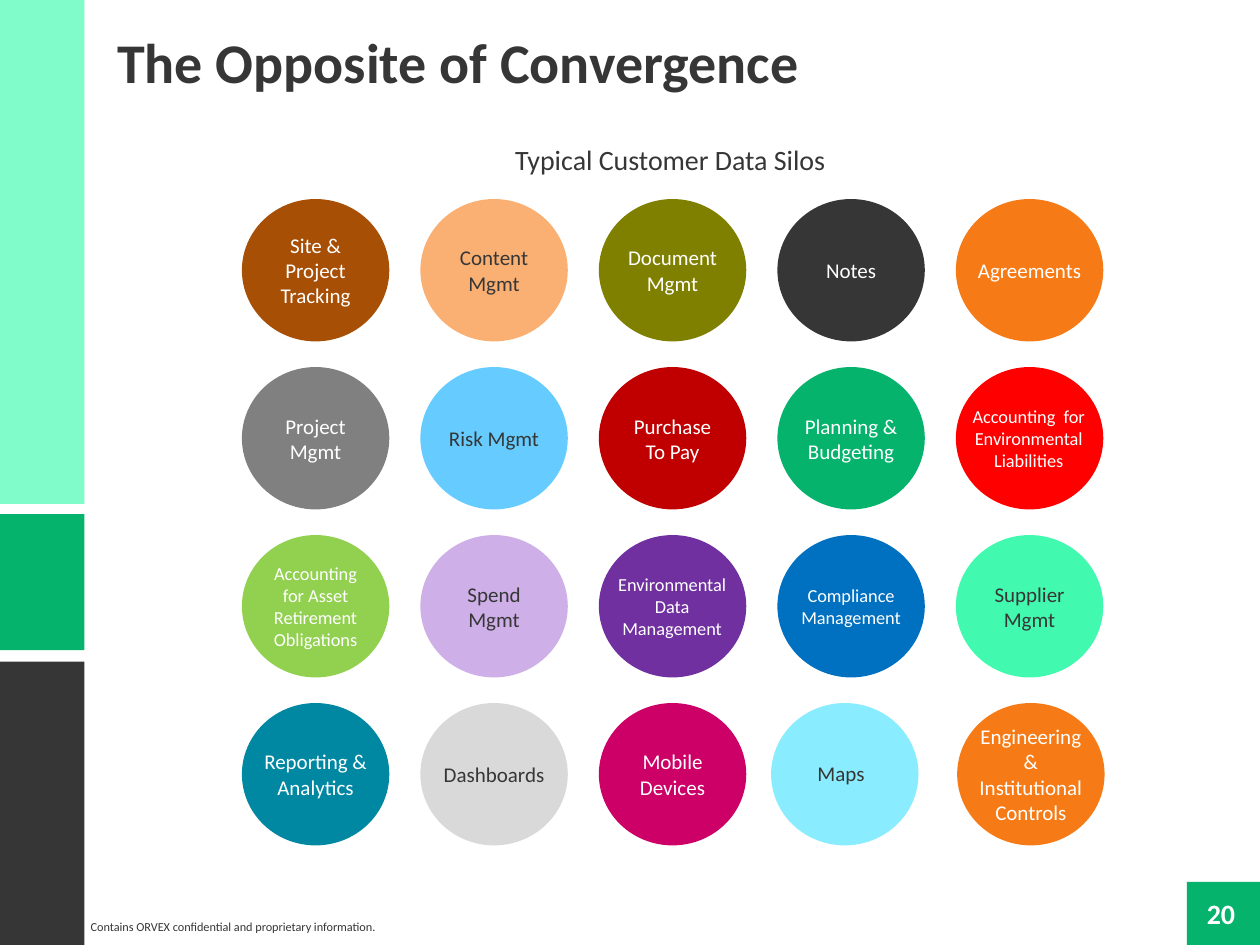
import pptx
import pptx.util
import pptx.dml.color
import pptx.enum.shapes
import pptx.enum.text

Inches = pptx.util.Inches
RGBColor = pptx.dml.color.RGBColor
Align = pptx.enum.text.PP_ALIGN
Anchor = pptx.enum.text.MSO_ANCHOR
AutoSize = pptx.enum.text.MSO_AUTO_SIZE
Shape = pptx.enum.shapes.MSO_SHAPE

FONT = "Calibri"
WHITE = RGBColor(0xFF, 0xFF, 0xFF)
DARK = RGBColor(0x36, 0x36, 0x36)
GREEN = RGBColor(0x05, 0xB3, 0x6D)
MINT = RGBColor(0x80, 0xFB, 0xCA)
BROWN = RGBColor(0xA8, 0x4F, 0x06)
PEACH = RGBColor(0xFA, 0xB0, 0x73)
OLIVE = RGBColor(0x80, 0x80, 0x00)
ORANGE = RGBColor(0xF6, 0x7B, 0x16)
GRAY = RGBColor(0x80, 0x80, 0x80)
SKY = RGBColor(0x66, 0xCC, 0xFF)
CRIMSON = RGBColor(0xC0, 0x00, 0x00)
RED = RGBColor(0xFF, 0x00, 0x00)
LIME = RGBColor(0x92, 0xD0, 0x50)
LILAC = RGBColor(0xCF, 0xAF, 0xE7)
PURPLE = RGBColor(0x70, 0x30, 0xA0)
BLUE = RGBColor(0x00, 0x70, 0xC0)
AQUAMARINE = RGBColor(0x41, 0xFA, 0xAF)
TEAL = RGBColor(0x00, 0x88, 0xA3)
SILVER = RGBColor(0xD9, 0xD9, 0xD9)
MAGENTA = RGBColor(0xCC, 0x00, 0x66)
CYAN = RGBColor(0x8A, 0xEC, 0xFF)

GRID_LEFT, GRID_TOP = 1.92, 1.58
COLUMN_STEP, ROW_STEP = 17 / 12, 4 / 3
SILO_WIDTH, SILO_HEIGHT = 1.17, 1.13

SILO_ROWS = [
    [("Site & Project Tracking", BROWN, WHITE, 12),
     ("Content Mgmt", PEACH, DARK, 12),
     ("Document Mgmt", OLIVE, WHITE, 12),
     ("Notes", DARK, WHITE, 12),
     ("Agreements", ORANGE, WHITE, 12)],
    [("Project Mgmt", GRAY, WHITE, 12),
     ("Risk Mgmt", SKY, DARK, 12),
     ("Purchase\nTo Pay", CRIMSON, WHITE, 12),
     ("Planning & Budgeting", GREEN, WHITE, 12),
     ("Accounting  for Environmental Liabilities", RED, WHITE, 10.5)],
    [("Accounting for Asset Retirement Obligations", LIME, WHITE, 10.5),
     ("Spend Mgmt", LILAC, DARK, 12),
     ("Environmental Data Management", PURPLE, WHITE, 10.5),
     ("Compliance Management", BLUE, WHITE, 10.5),
     ("Supplier Mgmt", AQUAMARINE, DARK, 12)],
    [("Reporting & Analytics", TEAL, WHITE, 12),
     ("Dashboards", SILVER, DARK, 12),
     ("Mobile Devices", MAGENTA, WHITE, 12),
     ("Maps", CYAN, DARK, 12),
     ("Engineering & Institutional\nControls", ORANGE, WHITE, 12)],
]

LABEL_BOXES = {
    "Accounting  for Environmental Liabilities": (7.58, 3.17, 1.17, 0.63),
    "Environmental Data Management": (4.75, 4.5, 1.17, 0.63),
    "Maps": (6.05, 5.99, 1.25, 0.3),
}
SILO_SHIFTS = {"Maps": -0.05, "Engineering & Institutional\nControls": 0.01}


def write_text(frame, text, size, color, align=Align.LEFT, bold=False):
    frame.text = text
    for para in frame.paragraphs:
        para.alignment = align
        for span in para.runs:
            span.font.name = FONT
            span.font.size = pptx.util.Pt(size)
            span.font.bold = bold
            span.font.color.rgb = color


def add_filled(page, kind, bounds, color):
    shape = page.shapes.add_shape(kind, *map(Inches, bounds))
    shape.shadow.inherit = False
    shape.fill.solid()
    shape.fill.fore_color.rgb = color
    shape.line.fill.background()
    return shape


def add_text(page, bounds, text, size, color, align=Align.LEFT,
             bold=False, side_inset=0.1, wrap=True):
    box = page.shapes.add_textbox(*map(Inches, bounds))
    frame = box.text_frame
    frame.word_wrap = wrap
    frame.auto_size = AutoSize.SHAPE_TO_FIT_TEXT
    frame.margin_left = frame.margin_right = Inches(side_inset)
    write_text(frame, text, size, color, align, bold)


def set_title(page, text):
    title = page.shapes.title
    title.left, title.top = Inches(0.83), Inches(0.17)
    title.width, title.height = Inches(9), Inches(0.64)
    frame = title.text_frame
    frame.vertical_anchor = Anchor.TOP
    frame.auto_size = AutoSize.SHAPE_TO_FIT_TEXT
    write_text(frame, text, 32, DARK, bold=True)
    frame.paragraphs[0].space_before = pptx.util.Pt(0)


def add_silo(page, row, column, text, fill, color, size):
    left = GRID_LEFT + column * COLUMN_STEP + SILO_SHIFTS.get(text, 0)
    top = GRID_TOP + row * ROW_STEP
    silo = add_filled(page, Shape.OVAL, (left, top, SILO_WIDTH, SILO_HEIGHT), fill)
    if text in LABEL_BOXES:
        add_text(page, LABEL_BOXES[text], text, size, color, Align.CENTER)
        return
    frame = silo.text_frame
    frame.word_wrap = True
    frame.vertical_anchor = Anchor.MIDDLE
    frame.margin_left = frame.margin_right = 0
    frame.margin_top = frame.margin_bottom = 0
    write_text(frame, text, size, color, Align.CENTER)


def add_frame(page):
    for top, height, color in [(5.25, 2.25, DARK), (4.08, 1.08, GREEN), (0, 4, MINT)]:
        add_filled(page, Shape.RECTANGLE, (0, top, 0.67, height), color)
    add_filled(page, Shape.RECTANGLE, (9.42, 7, 0.58, 0.5), GREEN)
    add_text(page, (9.42, 7.07, 0.54, 0.37), "20", 16, WHITE,
             Align.CENTER, bold=True, side_inset=0)
    add_text(page, (0.72, 7.25, 2.45, 0.22),
             "Contains ORVEX confidential and proprietary information.",
             7, DARK, side_inset=0)


def main():
    deck = pptx.Presentation()
    deck.slide_width, deck.slide_height = Inches(10), Inches(7.5)
    page = deck.slides.add_slide(deck.slide_layouts[5])
    add_frame(page)
    set_title(page, "The Opposite of Convergence")
    add_text(page, (3.99, 1.08, 2.69, 0.37), "Typical Customer Data Silos",
             16, DARK, wrap=False)
    for row, silos in enumerate(SILO_ROWS):
        for column, silo in enumerate(silos):
            add_silo(page, row, column, *silo)
    deck.save("out.pptx")


if __name__ == "__main__":
    main()
